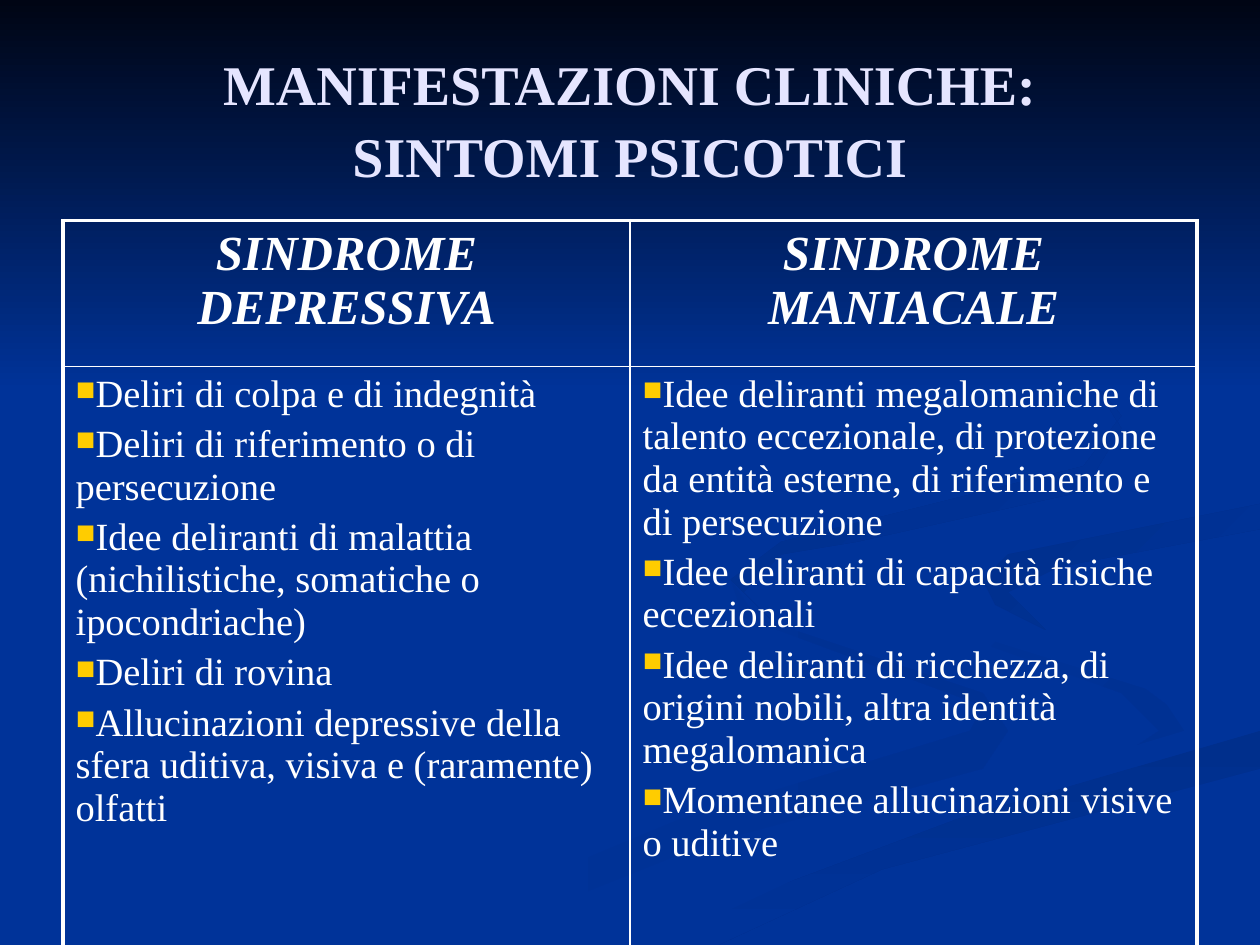
from lxml.etree import SubElement as Sub
from pptx import Presentation
from pptx.dml.color import RGBColor as Rgb
from pptx.enum.text import MSO_ANCHOR as Anchor, PP_ALIGN as Align
from pptx.oxml.ns import qn
from pptx.util import Inches, Pt

COLS, ROWS = 20, 15
FONT = "Times New Roman"
HUES = {"back": "003399", "night": "000514", "title": "E5E5FF", "text": "FFFFFF",
        "mark": "FFCC00", "dim": "003193", "dark": "002F8C"}

# Ribbon outlines in percent of the slide's width: points, first and last hue, angle
RIBBONS = [
    ([(78, 55), (60, 49), (57.5, 46), (59, 49), (78, 56), (77, 58), (54, 65),
      (30, 75), (36, 75), (56, 67), (78, 61), (80, 58)], "back", "dim", 0),
    ([(94, 57), (90, 54), (76, 50), (72.4, 46.4), (75, 50), (89, 55), (92, 58),
      (89, 60.5), (94, 58)], "back", "dim", 45),
    ([(50, 75), (57, 75), (70, 69), (99.8, 61), (99.8, 58), (76, 65), (60, 71)],
     "dark", "back", 90),
    ([(72.5, 46.4), (76, 50), (92, 55), (94, 58), (74, 64), (47.7, 74.9), (52, 75),
      (69, 67), (99.9, 58), (99.9, 54), (80, 48), (80, 44), (99.9, 40),
      (99.9, 38.7), (75, 43)], "back", "back", 0),
    ([(78, 46), (79, 48), (82.6, 49.6), (80.5, 47), (84, 45), (99.8, 42),
      (99.8, 40.2), (80, 44)], "dark", "back", 45),
    ([(68, 43), (86, 39), (89.4, 34.4), (86, 29), (76.2, 23.3), (85, 28), (89, 33),
      (86, 37), (62, 43), (57.7, 46), (62.2, 50), (59.3, 47), (62, 44.4)],
     "dark", "back", 45),
    ([(0, 0), (0, 30.8), (100, 30.8), (100, 0)], "night", "back", 90),
]

HEADS = ["SINDROME DEPRESSIVA", "SINDROME MANIACALE"]
LISTS = [
    ["Deliri di colpa e di indegnità",
     "Deliri di riferimento o di persecuzione",
     "Idee deliranti di malattia (nichilistiche, somatiche o ipocondriache)",
     "Deliri di rovina",
     "Allucinazioni depressive della sfera uditiva, visiva e (raramente) olfatti"],
    ["Idee deliranti megalomaniche di talento eccezionale, di protezione da entità "
     "esterne, di riferimento e di persecuzione",
     "Idee deliranti di capacità fisiche eccezionali",
     "Idee deliranti di ricchezza, di origini nobili, altra identità megalomanica",
     "Momentanee allucinazioni visive o uditive"],
]


def hue(name):
    return Rgb.from_string(HUES[name])


class Deck:
    """Holds the style, the grid and the current slide."""

    def __init__(self):
        self.prs = Presentation()
        self.prs.slide_width = Inches(10)
        self.unit = self.prs.slide_width / COLS
        self.prs.slide_height = round(self.unit * ROWS)
        self.slide = self.prs.slides.add_slide(self.prs.slide_layouts[6])
        fill = self.slide.background.fill
        fill.solid()
        fill.fore_color.rgb = hue("back")

    def place(self, *cells):
        """Turn grid columns and rows into lengths."""
        return [round(c * self.unit) for c in cells]

    def ribbon(self, points, first, last, angle):
        build = self.slide.shapes.build_freeform(
            *points[0], scale=self.prs.slide_width / 100)
        build.add_line_segments(points[1:], close=True)
        shape = build.convert_to_shape()
        shape.shadow.inherit = False
        shape.line.fill.background()
        shape.fill.gradient()
        shape.fill.gradient_angle = -angle % 360
        for stop, name in zip(shape.fill.gradient_stops, (first, last)):
            stop.color.rgb = hue(name)

    def style(self, para, size, color="text", bold=False, slant=False):
        font = para.font
        font.name, font.size = FONT, Pt(size)
        font.bold, font.italic = bold, slant
        font.color.rgb = hue(color)

    def title(self, text, *cells):
        frame = self.slide.shapes.add_textbox(*self.place(*cells)).text_frame
        frame.word_wrap = True
        frame.vertical_anchor = Anchor.MIDDLE
        frame.text = text
        para = frame.paragraphs[0]
        para.alignment, para.line_spacing = Align.CENTER, 1.08
        self.style(para, 32, "title", bold=True)

    def bullet(self, para):
        props = para._p.get_or_add_pPr()
        Sub(Sub(props, qn("a:buClr")), qn("a:srgbClr"), val=HUES["mark"])
        Sub(props, qn("a:buSzPct"), val="70000")
        Sub(props, qn("a:buChar"), char="■")

    def border(self, cell, outer):
        """Draw the four sides, thick where the side is an outer one."""
        props = cell._tc.get_or_add_tcPr()
        for side in "LRTB":
            width = Pt(2.25 if side in outer else 1)
            line = Sub(props, qn(f"a:ln{side}"), w=str(width))
            Sub(Sub(line, qn("a:solidFill")), qn("a:srgbClr"), val=HUES["text"])
        cell.fill.background()

    def table(self, heads, lists, heights, *cells):
        grid = self.slide.shapes.add_table(2, len(heads), *self.place(*cells)).table
        grid.first_row = grid.horz_banding = False
        for row, height in zip(grid.rows, self.place(*heights)):
            row.height = height
        for col, (head, items) in enumerate(zip(heads, lists)):
            side = "LR"[col]
            top, body = grid.cell(0, col), grid.cell(1, col)
            self.border(top, "T" + side)
            self.border(body, "B" + side)
            top.text = head
            para = top.text_frame.paragraphs[0]
            para.alignment = Align.CENTER
            self.style(para, 28, bold=True, slant=True)
            body.text = "\n".join(items)
            for para in body.text_frame.paragraphs:
                self.bullet(para)
                para.space_before = Pt(4.4)
                self.style(para, 22)


def main():
    deck = Deck()
    for ribbon in RIBBONS:
        deck.ribbon(*ribbon)
    deck.title("MANIFESTAZIONI CLINICHE:\vSINTOMI PSICOTICI", 1, 0.6, 18, 2.5)
    deck.table(HEADS, LISTS, (2.32, 9.58), 1, 3.5, 18, 11.9)
    deck.prs.save("out.pptx")


if __name__ == "__main__":
    main()
